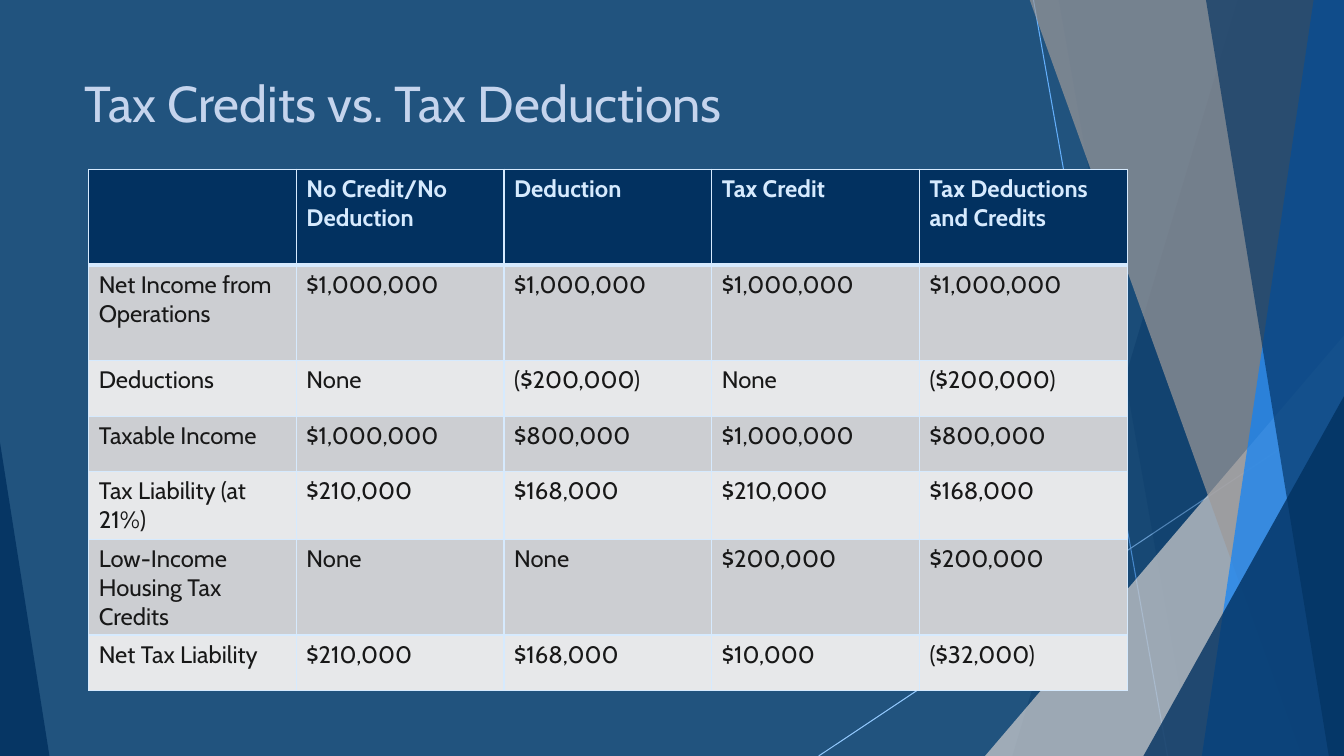
from dataclasses import dataclass

import lxml.etree
import pptx
import pptx.dml.color
import pptx.enum.shapes
import pptx.oxml
import pptx.oxml.ns
import pptx.util

RGBColor = pptx.dml.color.RGBColor
qn = pptx.oxml.ns.qn

PX = 9144  # EMU per px, 100 px to the inch
SLIDE_W, SLIDE_H = 1333, 750
FONT = "Cabin"

BACKGROUND = RGBColor(0x21, 0x53, 0x7E)
NAVY = RGBColor(0x02, 0x31, 0x60)
BLUE = RGBColor(0x0D, 0x83, 0xFA)
SILVER = RGBColor(0xD0, 0xCE, 0xCE)
GRAY = RGBColor(0x9D, 0x99, 0x99)
SKY = RGBColor(0x64, 0xAF, 0xFB)
LIGHT_SKY = RGBColor(0x91, 0xC7, 0xFC)
TITLE_COLOR = RGBColor(0xC5, 0xD4, 0xED)
ICE = RGBColor(0xD6, 0xEA, 0xFE)
INK = RGBColor(0x18, 0x18, 0x18)
DARK_BAND = RGBColor(0xCC, 0xCE, 0xD2)
LIGHT_BAND = RGBColor(0xE7, 0xE8, 0xEA)


@dataclass(frozen=True)
class Ray:
    x1: int
    y1: int
    x2: int
    y2: int
    color: RGBColor


@dataclass(frozen=True)
class Band:
    """Slanted left edge, filled out to the right side of the slide."""
    top_x: int
    bottom_x: int
    color: RGBColor
    opacity: int


@dataclass(frozen=True)
class Corner:
    """Triangle standing on the bottom of the slide."""
    x: int
    y: int
    width: int
    apex: int
    color: RGBColor
    opacity: int


RAYS = [
    Ray(1025, 0, 1158, 750, SKY),
    Ray(1333, 403, 812, 750, LIGHT_SKY),
]
FACETS = [
    Band(1228, 1004, NAVY, 30),
    Band(1050, 1182, NAVY, 20),
    Corner(977, 333, 356, 1, SILVER, 72),
    Band(1021, 1291, GRAY, 70),
    Band(1303, 1192, BLUE, 70),
    Band(1196, 1318, NAVY, 65),
    Corner(1134, 393, 199, 1, NAVY, 80),
    Corner(0, 439, 49, 0, NAVY, 85),
]

COL_WIDTH = 206
ROW_HEIGHTS = [95, 95, 55, 55, 67, 95, 55]
ROWS = [
    ["", "No Credit/No Deduction", "Deduction", "Tax Credit", "Tax Deductions and Credits"],
    ["Net Income from Operations", "$1,000,000", "$1,000,000", "$1,000,000", "$1,000,000"],
    ["Deductions", "None", "($200,000)", "None", "($200,000)"],
    ["Taxable Income", "$1,000,000", "$800,000", "$1,000,000", "$800,000"],
    ["Tax Liability (at 21%)", "$210,000", "$168,000", "$210,000", "$168,000"],
    ["Low-Income Housing Tax Credits", "None", "None", "$200,000", "$200,000"],
    ["Net Tax Liability", "$210,000", "$168,000", "$10,000", "($32,000)"],
]


def px(n: int) -> pptx.util.Emu:
    return pptx.util.Emu(n * PX)


def draw_ray(s, ray: Ray) -> None:
    line = s.shapes.add_connector(
        pptx.enum.shapes.MSO_CONNECTOR.STRAIGHT,
        px(ray.x1), px(ray.y1), px(ray.x2), px(ray.y2))
    line.line.color.rgb = ray.color
    line.line.width = pptx.util.Pt(0.75)
    lxml.etree.SubElement(line._element.spPr, qn("a:effectLst"))


def draw_facet(s, facet: Band | Corner) -> None:
    if isinstance(facet, Band):
        builder = s.shapes.build_freeform(facet.top_x, -1, scale=PX)
        builder.add_line_segments(
            [(SLIDE_W, -1), (SLIDE_W, SLIDE_H), (facet.bottom_x, SLIDE_H)], close=True)
        sp = builder.convert_to_shape()
    else:
        sp = s.shapes.add_shape(
            pptx.enum.shapes.MSO_SHAPE.ISOSCELES_TRIANGLE,
            px(facet.x), px(facet.y), px(facet.width), px(SLIDE_H - facet.y))
        sp.adjustments[0] = facet.apex
    sp.shadow.inherit = False
    sp.line.fill.background()
    sp.fill.solid()
    sp.fill.fore_color.rgb = facet.color
    color = sp._element.spPr.find(qn("a:solidFill"))[0]
    lxml.etree.SubElement(color, qn("a:alpha"), val=str(facet.opacity * 1000))


def style_runs(tf, size: int, color: RGBColor, bold: bool = False) -> None:
    for p in tf.paragraphs:
        for r in p.runs:
            r.font.name = FONT
            r.font.size = pptx.util.Pt(size)
            r.font.bold = bold
            r.font.color.rgb = color


def set_borders(cell, top: int, bottom: int) -> None:
    tc_pr = cell._tc.get_or_add_tcPr()
    sides = [("a:lnL", 1), ("a:lnR", 1), ("a:lnT", top), ("a:lnB", bottom)]
    for i, (tag, width) in enumerate(sides):
        ln = lxml.etree.Element(qn(tag), w=str(pptx.util.Pt(width)))
        fill = lxml.etree.SubElement(ln, qn("a:solidFill"))
        lxml.etree.SubElement(fill, qn("a:srgbClr"), val=str(ICE))
        tc_pr.insert(i, ln)


def draw_title(s) -> None:
    tf = s.shapes.add_textbox(px(74), px(67), px(1030), px(144)).text_frame
    tf.word_wrap = True
    tf.text = "Tax Credits vs. Tax Deductions"
    style_runs(tf, 36, TITLE_COLOR)


def draw_table(s) -> None:
    n_cols = len(ROWS[0])
    table = s.shapes.add_table(
        len(ROWS), n_cols, px(88), px(168),
        px(COL_WIDTH * n_cols), px(sum(ROW_HEIGHTS))).table
    table.horz_banding = False
    for col in table.columns:
        col.width = px(COL_WIDTH)
    for i, (height, texts) in enumerate(zip(ROW_HEIGHTS, ROWS)):
        header = i == 0
        table.rows[i].height = px(height)
        for j, text in enumerate(texts):
            cell = table.cell(i, j)
            cell.text_frame.text = text
            style_runs(cell.text_frame, 17, ICE if header else INK, header)
            cell.fill.solid()
            cell.fill.fore_color.rgb = (
                NAVY if header else DARK_BAND if i % 2 else LIGHT_BAND)
            # The rule under the header is heavier than the others
            set_borders(cell, top=3 if i == 1 else 1, bottom=3 if header else 1)


def main() -> None:
    prs = pptx.Presentation()
    prs.slide_width, prs.slide_height = px(SLIDE_W), px(SLIDE_H)
    s = prs.slides.add_slide(prs.slide_layouts[6])
    s.background.fill.solid()
    s.background.fill.fore_color.rgb = BACKGROUND

    # Backdrop of rays and translucent facets
    for ray in RAYS:
        draw_ray(s, ray)
    for facet in FACETS:
        draw_facet(s, facet)

    # Content
    draw_title(s)
    draw_table(s)
    prs.save("out.pptx")


if __name__ == "__main__":
    main()
